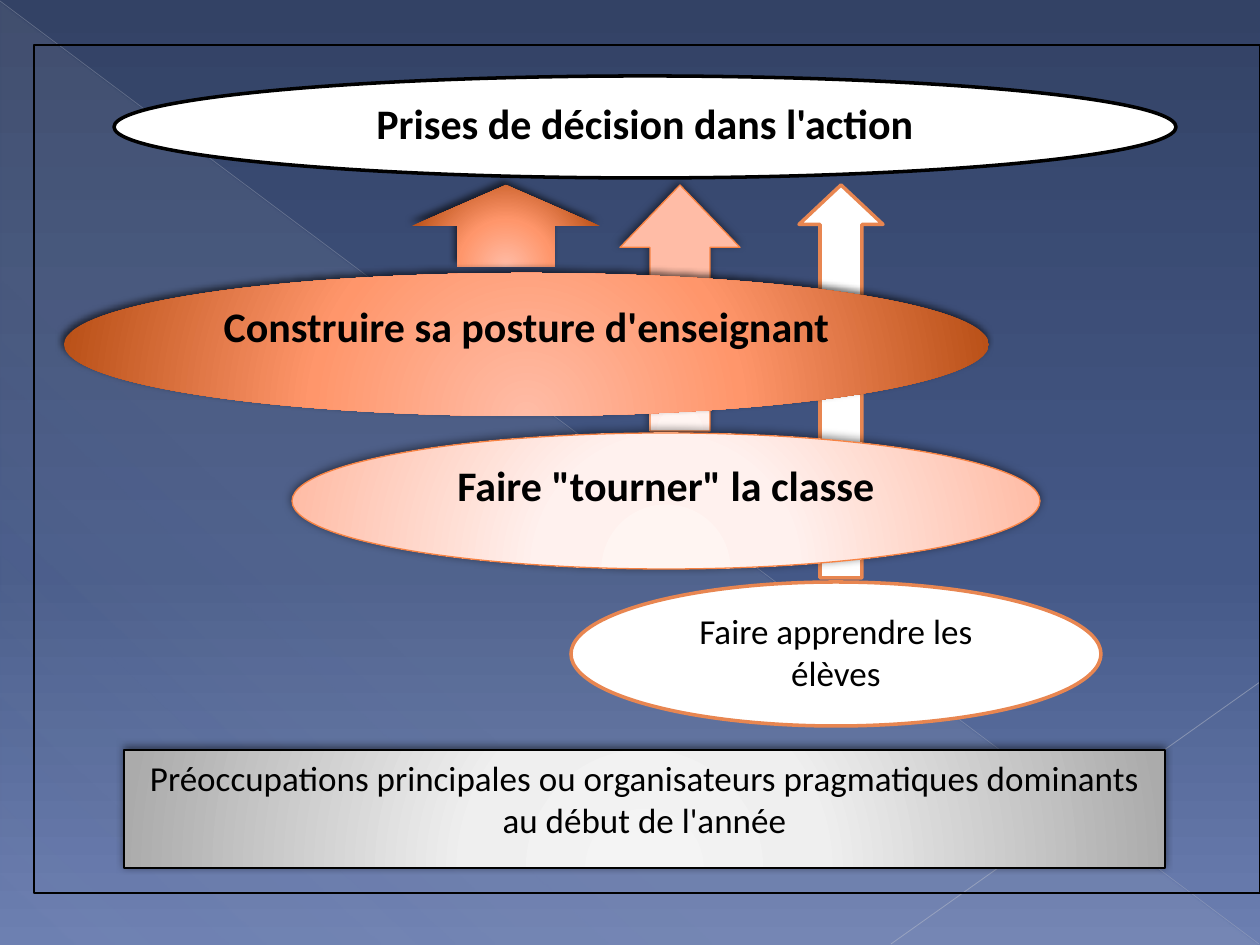
from lxml import etree
from pptx import Presentation
from pptx import util as u
from pptx.dml.color import RGBColor
from pptx.enum import shapes, text
from pptx.oxml.ns import qn

SCALE = 914400 / 126
BLACK = RGBColor(0x00, 0x00, 0x00)
WHITE = RGBColor(0xFF, 0xFF, 0xFF)
ORANGE = RGBColor(0xE8, 0x86, 0x51)
EDGE = RGBColor(0xF7, 0x82, 0x42)
HAZE = RGBColor(0xD4, 0xD4, 0xD6)
RAY = RGBColor(0xB9, 0xBD, 0xC8)
PALE_RAY = RGBColor(0xC1, 0xC4, 0xCE)
PEACH = RGBColor(0xFF, 0xBC, 0xA6)

# Gradient stops: position, colour and opacity in percent
SKY = [(0, RGBColor(0x33, 0x42, 0x65), 100),
       (60, RGBColor(0x44, 0x58, 0x87), 100),
       (100, RGBColor(0x6C, 0x7F, 0xB1), 100)]
VEIL = [(0, HAZE, 10), (70, HAZE, 8), (100, HAZE, 1)]
STRONG = [(0, PEACH, 100),
          (46, RGBColor(0xFF, 0x96, 0x6B), 100),
          (100, RGBColor(0xBA, 0x51, 0x18), 100)]
SOFT = [(0, RGBColor(0xFF, 0xF5, 0xF2), 100),
        (34, RGBColor(0xFF, 0xF1, 0xEE), 100),
        (100, PEACH, 100)]
GREY = [(0, RGBColor(0xF4, 0xF4, 0xF4), 100),
        (34, RGBColor(0xEF, 0xEF, 0xEF), 100),
        (100, RGBColor(0xAB, 0xAB, 0xAB), 100)]

# Shadows: opacity in percent, blur and distance in points
DEEP = (60, 4, 3)
LIGHT = (50, 5, 2)


def px(n):
    return u.Emu(round(n * SCALE))


def sub(node, tag, **attrs):
    return etree.SubElement(node, qn(tag), {k: str(v) for k, v in attrs.items()})


def tint(node, color, alpha):
    clr = sub(node, "a:srgbClr", val=color)
    if alpha < 100:
        sub(clr, "a:alpha", val=alpha * 1000)


class Deck:
    font = "Calibri"

    def __init__(self, wide, high):
        self.prs = Presentation()
        self.prs.slide_width, self.prs.slide_height = px(wide), px(high)
        self.slide = self.prs.slides.add_slide(self.prs.slide_layouts[6])

    def blend(self, props, stops, angle=None):
        """Swap a solid fill for a linear or, without angle, a round gradient."""
        grad = etree.Element(qn("a:gradFill"), rotWithShape="1")
        items = sub(grad, "a:gsLst")
        for pos, color, alpha in stops:
            tint(sub(items, "a:gs", pos=pos * 1000), color, alpha)
        if angle is None:
            way = sub(grad, "a:path", path="circle")
            sub(way, "a:fillToRect", l=50000, t=155000, r=50000, b=-55000)
        else:
            sub(grad, "a:lin", ang=angle * 60000, scaled=0)
        props.replace(props.find(qn("a:solidFill")), grad)

    def back(self, stops, angle):
        fill = self.slide.background.fill
        fill.solid()
        fill.fore_color.rgb = WHITE
        props = self.slide.element.find(".//" + qn("p:bgPr"))
        self.blend(props, stops, angle)

    def ray(self, x1, y1, x2, y2, color, width, alpha):
        line = self.slide.shapes.add_connector(
            shapes.MSO_CONNECTOR.STRAIGHT, px(x1), px(y1), px(x2), px(y2))
        line.line.color.rgb = color
        line.line.width = u.Pt(width)
        props = line.element.spPr
        sub(props.find(".//" + qn("a:srgbClr")), "a:alpha", val=alpha * 1000)
        sub(props, "a:effectLst")

    def shape(self, kind, box, fill=None, line=None, shade=None, angle=None,
              adj=()):
        item = self.slide.shapes.add_shape(kind, *map(px, box))
        item.shadow.inherit = False
        props = item.element.spPr
        if fill is None:
            item.fill.background()
        else:
            item.fill.solid()
            item.fill.fore_color.rgb = WHITE
            if fill != WHITE:
                self.blend(props, fill, angle)
        if line:
            item.line.color.rgb, item.line.width = line[0], u.Pt(line[1])
        else:
            item.line.fill.background()
        if shade:
            alpha, blur, dist = shade
            drop = sub(props.find(qn("a:effectLst")), "a:outerShdw",
                       blurRad=u.Pt(blur), dist=u.Pt(dist),
                       dir=245 * 60000, rotWithShape=0)
            tint(drop, BLACK, alpha)
        for i, value in enumerate(adj):
            item.adjustments[i] = value
        return item

    def label(self, item, words, size, bold=False):
        frame = item.text_frame
        frame.word_wrap = True
        frame.vertical_anchor = text.MSO_ANCHOR.TOP
        para = frame.paragraphs[0]
        para.alignment = text.PP_ALIGN.CENTER
        run = para.add_run()
        run.text = words
        font = run.font
        font.name, font.size, font.bold = self.font, u.Pt(size), bold
        font.color.rgb = BLACK


def main():
    deck = Deck(1260, 945)
    kind = shapes.MSO_SHAPE

    # Backdrop
    deck.back(SKY, 90)
    deck.shape(kind.RIGHT_TRIANGLE, (1, 3, 1257, 942), VEIL, angle=133)
    deck.ray(0, 1, 1259, 944, RAY, 0.39, 35)
    deck.ray(1260, 682, 891, 944, PALE_RAY, 0.47, 45)
    deck.shape(kind.RECTANGLE, (34, 45, 1226, 848), line=(BLACK, 1))

    # Arrows, all reaching up to the decision level
    for x, w, h, fill, line, shade, adj in [
            (412, 188, 82, STRONG, None, DEEP, (0.52, 0.5)),
            (620, 120, 246, SOFT, (EDGE, 0.75), LIGHT, (0.5, 0.52)),
            (799, 84, 393, WHITE, (ORANGE, 2), None, (0.5, 0.47))]:
        deck.shape(kind.UP_ARROW, (x, 185, w, h), fill, line, shade, adj=adj)

    # Labelled levels and caption
    for form, box, fill, line, shade, words, size, bold in [
            (kind.OVAL, (292, 433, 748, 136), SOFT, (EDGE, 0.75), LIGHT,
             'Faire "tourner" la classe', 24, True),
            (kind.OVAL, (571, 582, 530, 144), WHITE, (ORANGE, 2), None,
             "Faire apprendre les élèves", 20, False),
            (kind.OVAL, (114, 76, 1062, 102), WHITE, (BLACK, 2), None,
             "Prises de décision dans l'action", 24, True),
            (kind.RECTANGLE, (124, 750, 1041, 118), GREY, (BLACK, 0.75), LIGHT,
             "Préoccupations principales ou organisateurs pragmatiques "
             "dominants au début de l'année", 20, False),
            (kind.OVAL, (64, 273, 925, 143), STRONG, None, DEEP,
             "Construire sa posture d'enseignant", 24, True)]:
        item = deck.shape(form, box, fill, line, shade)
        deck.label(item, words, size, bold)

    deck.prs.save("out.pptx")


if __name__ == "__main__":
    main()
